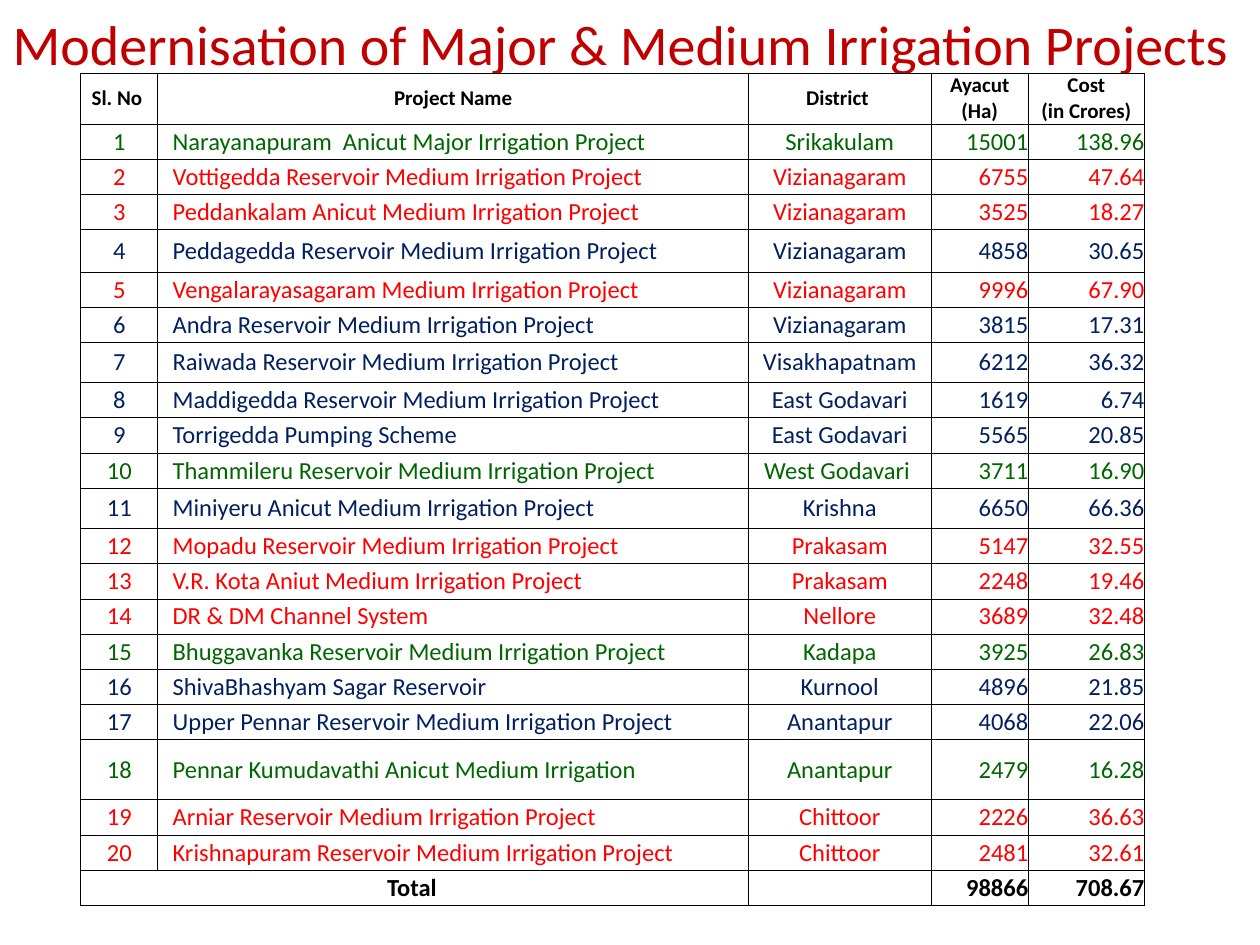
from lxml.etree import SubElement
from pptx import Presentation
from pptx.dml.color import RGBColor
from pptx.enum.text import MSO_ANCHOR as Anchor, MSO_AUTO_SIZE as Fit, PP_ALIGN as Align
from pptx.oxml.ns import qn
from pptx.util import Cm, Pt

BLACK = RGBColor(0, 0, 0)
WHITE = RGBColor(255, 255, 255)
MAROON = RGBColor(0xC0, 0, 0)
GREEN = RGBColor(0, 0x66, 0)
RED = RGBColor(255, 0, 0)
NAVY = RGBColor(0, 0x20, 0x60)
FONT = "Calibri"

# Content
TITLE = "Modernisation of Major & Medium Irrigation Projects"
HEAD = ("Sl. No ", "Project Name", "District ", "Ayacut (Ha)", " Cost \n(in Crores)")
PROJECTS = [
    (GREEN, "Narayanapuram  Anicut Major Irrigation Project", "Srikakulam", "15001", "138.96"),
    (RED, "Vottigedda Reservoir Medium Irrigation Project", "Vizianagaram", "6755", "47.64"),
    (RED, "Peddankalam Anicut Medium Irrigation Project", "Vizianagaram", "3525", "18.27"),
    (NAVY, "Peddagedda Reservoir Medium Irrigation Project", "Vizianagaram", "4858", "30.65"),
    (RED, "Vengalarayasagaram Medium Irrigation Project", "Vizianagaram", "9996", "67.90"),
    (NAVY, "Andra Reservoir Medium Irrigation Project", "Vizianagaram", "3815", "17.31"),
    (NAVY, "Raiwada Reservoir Medium Irrigation Project", "Visakhapatnam", "6212", "36.32"),
    (NAVY, "Maddigedda Reservoir Medium Irrigation Project", "East Godavari", "1619", "6.74"),
    (NAVY, "Torrigedda Pumping Scheme", "East Godavari", "5565", "20.85"),
    (GREEN, "Thammileru Reservoir Medium Irrigation Project", "West Godavari ", "3711", "16.90"),
    (NAVY, "Miniyeru Anicut Medium Irrigation Project", "Krishna", "6650", "66.36"),
    (RED, "Mopadu Reservoir Medium Irrigation Project", "Prakasam", "5147", "32.55"),
    (RED, "V.R. Kota Aniut Medium Irrigation Project", "Prakasam", "2248", "19.46"),
    (RED, "DR & DM Channel System", "Nellore", "3689", "32.48"),
    (GREEN, "Bhuggavanka Reservoir Medium Irrigation Project", "Kadapa", "3925", "26.83"),
    (NAVY, "ShivaBhashyam Sagar Reservoir", "Kurnool", "4896", "21.85"),
    (NAVY, "Upper Pennar Reservoir Medium Irrigation Project", "Anantapur", "4068", "22.06"),
    (GREEN, "Pennar Kumudavathi Anicut Medium Irrigation", "Anantapur", "2479", "16.28"),
    (RED, "Arniar Reservoir Medium Irrigation Project", "Chittoor", "2226", "36.63"),
    (RED, "Krishnapuram Reservoir Medium Irrigation Project", "Chittoor", "2481", "32.61"),
]
TOTAL = ("Total ", "", "", "98866", "708.67")

# Table sizes in cm; only the taller rows are listed
WIDTHS = (1.55, 11.91, 3.68, 1.96, 2.34)
ROW = 0.71
TALL = {0: 1.03, 4: 0.85, 7: 0.81, 11: 0.81, 18: 1.21}
ALIGNS = (Align.CENTER, Align.LEFT, Align.CENTER, Align.RIGHT, Align.RIGHT)


def style(para, size, color, bold=False):
    font = para.font
    font.name, font.size, font.bold = FONT, Pt(size), bold
    font.color.rgb = color


def border(cell):
    props = cell._tc.get_or_add_tcPr()
    for side in ("lnL", "lnR", "lnT", "lnB"):
        line = SubElement(props, qn(f"a:{side}"), w=str(Pt(0.5)))
        fill = SubElement(line, qn("a:solidFill"))
        SubElement(fill, qn("a:srgbClr"), val=str(BLACK))


def write(cell, text, align, size, color, bold):
    cell.margin_left = cell.margin_right = cell.margin_top = cell.margin_bottom = 0
    cell.vertical_anchor = Anchor.MIDDLE
    border(cell)
    cell.fill.solid()
    cell.fill.fore_color.rgb = WHITE
    para = cell.text_frame.paragraphs[0]
    para.text = text
    para.alignment = align
    style(para, size, color, bold)
    if align == Align.LEFT:
        props = para._p.get_or_add_pPr()
        props.set("marL", str(Cm(0.3)))
        props.set("indent", "0")


def main():
    prs = Presentation()
    prs.slide_width, prs.slide_height = Cm(25.4), Cm(19.05)
    slide = prs.slides.add_slide(prs.slide_layouts[5])

    # Title
    title = slide.shapes.title
    title.left, title.top, title.width, title.height = 0, 0, prs.slide_width, Cm(1.9)
    frame = title.text_frame
    frame.text = TITLE
    frame.word_wrap, frame.auto_size = True, Fit.NONE
    frame.vertical_anchor, frame.margin_top = Anchor.TOP, Cm(0.2)
    para = frame.paragraphs[0]
    para.alignment = Align.LEFT
    style(para, 32, MAROON)

    # Table grid
    count = len(PROJECTS) + 2
    highs = [TALL.get(i, ROW) for i in range(count)]
    table = slide.shapes.add_table(count, len(WIDTHS), Cm(1.63), Cm(1.47),
                                   Cm(sum(WIDTHS)), Cm(sum(highs))).table
    table.first_row = table.horz_banding = False
    for col, wide in zip(table.columns, WIDTHS):
        col.width = Cm(wide)
    for row, high in zip(table.rows, highs):
        row.height = Cm(high)

    # Header, projects and total
    mid = (Align.CENTER,) * len(HEAD)
    rows = [(HEAD, mid, 12, BLACK, True)]
    for num, (color, *rest) in enumerate(PROJECTS, 1):
        rows.append(((str(num), *rest), ALIGNS, 14, color, False))
    rows.append((TOTAL, mid[:3] + ALIGNS[3:], 14, BLACK, True))
    for r, (texts, aligns, *look) in enumerate(rows):
        for c, (text, align) in enumerate(zip(texts, aligns)):
            write(table.cell(r, c), text, align, *look)
    table.cell(count - 1, 0).merge(table.cell(count - 1, 1))

    prs.save("out.pptx")


if __name__ == "__main__":
    main()
